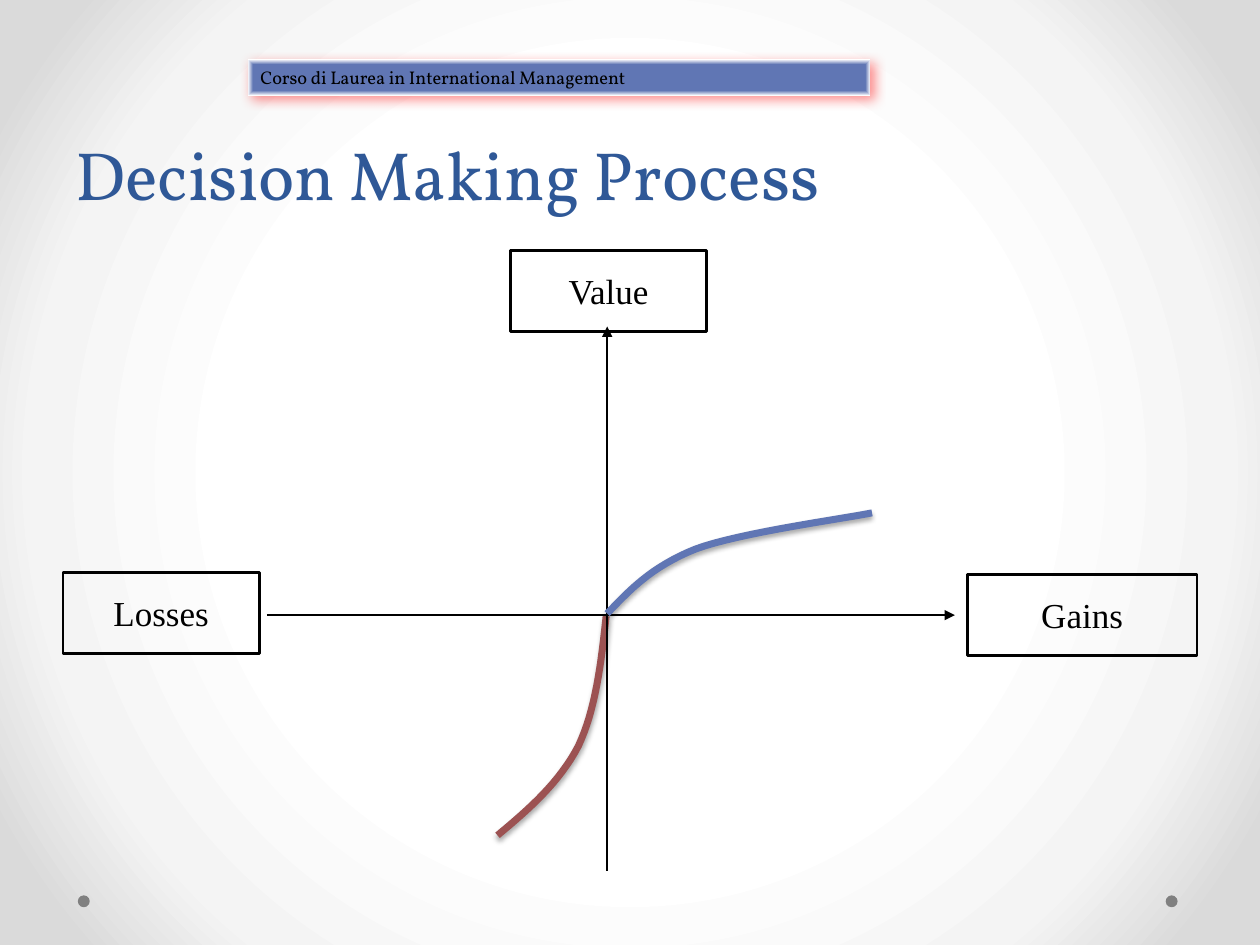
"""Build the slide that shows the value curve of gains and losses."""
from dataclasses import dataclass

from pptx import Presentation, oxml
from pptx import util as u
from pptx.dml.color import RGBColor
from pptx.enum import shapes, text
from pptx.oxml import ns

BLACK, BLUE, RED = "000000", "6076B4", "9C5252"
SEGMENTS = 16
AXIS_X, AXIS_Y = 12.24, 12.4


@dataclass
class Label:
    words: str
    left: float
    top: float
    width: float


@dataclass
class Axis:
    start: tuple
    end: tuple


@dataclass
class Curve:
    color: str
    start: tuple
    beziers: list


@dataclass
class Shadow:
    color: str
    alpha: int
    blur: float
    distance: float
    angle: int


LABELS = [
    Label("Value", 10.29, 5.05, 3.96),
    Label("Gains", 19.5, 11.58, 4.63),
    Label("Losses", 1.27, 11.54, 3.96),
]
AXES = [
    Axis((5.38, AXIS_Y), (19.25, AXIS_Y)),
    Axis((AXIS_X, 17.55), (AXIS_X, 6.58)),
]
LOSS_CURVE = Curve(RED, (12.22, 12.42), [
    ((12.12, 13.36), (12.01, 14.3), (11.66, 15.04)),
    ((11.28, 15.77), (10.67, 16.31), (10.03, 16.84)),
])
GAIN_CURVE = Curve(BLUE, (12.24, 12.37), [
    ((12.7, 11.89), (13.13, 11.43), (14.02, 11.07)),
    ((14.91, 10.74), (16.99, 10.46), (17.58, 10.34)),
])
CURVE_SHADOW = Shadow(BLACK, 35, 3.1, 1.8, 90)
BANNER_SHADOW = Shadow("FF0000", 43, 7, 3, 45)


def rgb(value: str) -> RGBColor:
    """Turn a hex string into a colour."""
    return RGBColor.from_string(value)


def set_values(target, values: dict) -> None:
    """Set every attribute named in the dict."""
    for name, value in values.items():
        setattr(target, name, value)


def gradient(stops: list, kind: str):
    """Make a gradient fill that spreads from the centre."""
    marks = "".join(
        f'<a:gs pos="{position * 1000}"><a:srgbClr val="{color}"/></a:gs>'
        for position, color in stops)
    return oxml.parse_xml(
        f'<a:gradFill {ns.nsdecls("a")} rotWithShape="1"><a:gsLst>{marks}</a:gsLst>'
        f'<a:path path="{kind}"><a:fillToRect l="50000" t="50000" r="50000" b="50000"/>'
        '</a:path></a:gradFill>')


def set_background(slide) -> None:
    """Give the slide its round grey gradient."""
    background = oxml.parse_xml(
        f'<p:bg {ns.nsdecls("p", "a")}><p:bgPr><a:effectLst/></p:bgPr></p:bg>')
    stops = [(50, "FFFFFF"), (76, "F4F4F4"), (92, "DADADA")]
    background[0].insert(0, gradient(stops, "circle"))
    slide.element.cSld.insert(0, background)


def add_shadow(shape, shadow: Shadow) -> None:
    """Put an outer shadow on a shape."""
    shape.shadow.inherit = False
    effects = shape.element.spPr.find(ns.qn("a:effectLst"))
    effects.append(oxml.parse_xml(
        f'<a:outerShdw {ns.nsdecls("a")} blurRad="{u.Pt(shadow.blur)}" '
        f'dist="{u.Pt(shadow.distance)}" dir="{shadow.angle * 60000}" rotWithShape="0">'
        f'<a:srgbClr val="{shadow.color}"><a:alpha val="{shadow.alpha * 1000}"/>'
        '</a:srgbClr></a:outerShdw>'))


def set_line(shape, color: str, width: float) -> None:
    """Set the colour and width of an outline."""
    shape.line.color.rgb = rgb(color)
    shape.line.width = u.Pt(width)


def write(shape, words: str, font: str, size: float, color: str, frame: dict,
          layout: dict) -> None:
    """Write one formatted paragraph in a shape."""
    set_values(shape.text_frame, {"word_wrap": True, **frame})
    paragraph = shape.text_frame.paragraphs[0]
    set_values(paragraph, layout)
    run = paragraph.add_run()
    run.text = words
    set_values(run.font, {"name": font, "size": u.Pt(size)})
    run.font.color.rgb = rgb(color)


def add_box(slide, kind, left: float, top: float, width: float, height: float):
    """Add a preset shape without fill, line or shadow."""
    shape = slide.shapes.add_shape(
        kind, u.Cm(left), u.Cm(top), u.Cm(width), u.Cm(height))
    shape.shadow.inherit = False
    shape.fill.background()
    shape.line.fill.background()
    return shape


def add_dot(slide, left: float) -> None:
    """Add a small grey footer dot."""
    dot = add_box(slide, shapes.MSO_SHAPE.OVAL, left, 18.05, 0.24, 0.24)
    dot.fill.solid()
    dot.fill.fore_color.rgb = rgb("808080")


def add_title(slide) -> None:
    """Place and format the slide title."""
    title = slide.shapes.title
    set_values(title, {"left": u.Cm(1.27), "top": u.Cm(1.8),
                       "width": u.Cm(22.86), "height": u.Cm(2.64)})
    write(title, "Decision Making Process", "Vollkorn", 39, "2F5897",
          {"vertical_anchor": text.MSO_ANCHOR.BOTTOM, "auto_size": text.MSO_AUTO_SIZE.NONE},
          {"alignment": text.PP_ALIGN.LEFT, "line_spacing": u.Pt(58)})


def add_banner(slide) -> None:
    """Add the course banner with its gradient and red glow."""
    banner = add_box(slide, shapes.MSO_SHAPE.RECTANGLE, 5, 1.2, 12.55, 0.73)
    properties = banner.element.spPr
    properties.replace(properties.find(ns.qn("a:noFill")),
                       gradient([(72, BLUE), (100, "FFFFFF")], "shape"))
    add_shadow(banner, BANNER_SHADOW)
    write(banner, "Corso di Laurea in International Management", "Vollkorn", 10.5, BLACK,
          {"vertical_anchor": text.MSO_ANCHOR.TOP,
           "auto_size": text.MSO_AUTO_SIZE.SHAPE_TO_FIT_TEXT},
          {"alignment": text.PP_ALIGN.LEFT})


def add_label(slide, label: Label) -> None:
    """Add an outlined box with centred text."""
    box = add_box(slide, shapes.MSO_SHAPE.RECTANGLE, label.left, label.top, label.width, 1.63)
    set_line(box, BLACK, 1.5)
    write(box, label.words, "Times New Roman", 20, BLACK,
          {"vertical_anchor": text.MSO_ANCHOR.MIDDLE},
          {"alignment": text.PP_ALIGN.CENTER})


def add_axis(slide, axis: Axis) -> None:
    """Add an axis with an arrowhead at its end."""
    points = [u.Cm(value) for value in axis.start + axis.end]
    connector = slide.shapes.add_connector(shapes.MSO_CONNECTOR.STRAIGHT, *points)
    set_line(connector, BLACK, 1.5)
    properties = connector.element.spPr
    oxml_line = properties.find(ns.qn("a:ln"))
    oxml_line.append(oxml.parse_xml(f'<a:tailEnd {ns.nsdecls("a")} type="triangle"/>'))
    properties.append(oxml.parse_xml(f'<a:effectLst {ns.nsdecls("a")}/>'))


def curve_points(curve: Curve) -> list:
    """List evenly stepped points along the joined Bezier arcs."""
    points, start = [curve.start], curve.start
    for first, second, end in curve.beziers:
        for step in range(1, SEGMENTS + 1):
            t = step / SEGMENTS
            weights = ((1 - t) ** 3, 3 * t * (1 - t) ** 2, 3 * t * t * (1 - t), t ** 3)
            points.append(tuple(sum(w * value for w, value in zip(weights, values))
                                for values in zip(start, first, second, end)))
        start = end
    return points


def add_curve(slide, curve: Curve) -> None:
    """Draw a thick shadowed curve."""
    points = [(u.Cm(x), u.Cm(y)) for x, y in curve_points(curve)]
    builder = slide.shapes.build_freeform(*points[0])
    builder.add_line_segments(points[1:], close=False)
    shape = builder.convert_to_shape()
    shape.fill.background()
    set_line(shape, curve.color, 4)
    add_shadow(shape, CURVE_SHADOW)


def main() -> None:
    """Build and save the presentation."""
    presentation = Presentation()
    set_values(presentation, {"slide_width": u.Cm(25.4), "slide_height": u.Cm(19.05)})
    slide = presentation.slides.add_slide(presentation.slide_layouts[5])
    set_background(slide)
    for left in (23.5, 1.57):
        add_dot(slide, left)
    add_title(slide)
    add_banner(slide)
    add_curve(slide, LOSS_CURVE)
    for axis in AXES:
        add_axis(slide, axis)
    add_curve(slide, GAIN_CURVE)
    for label in LABELS:
        add_label(slide, label)
    presentation.save("out.pptx")


if __name__ == "__main__":
    main()
